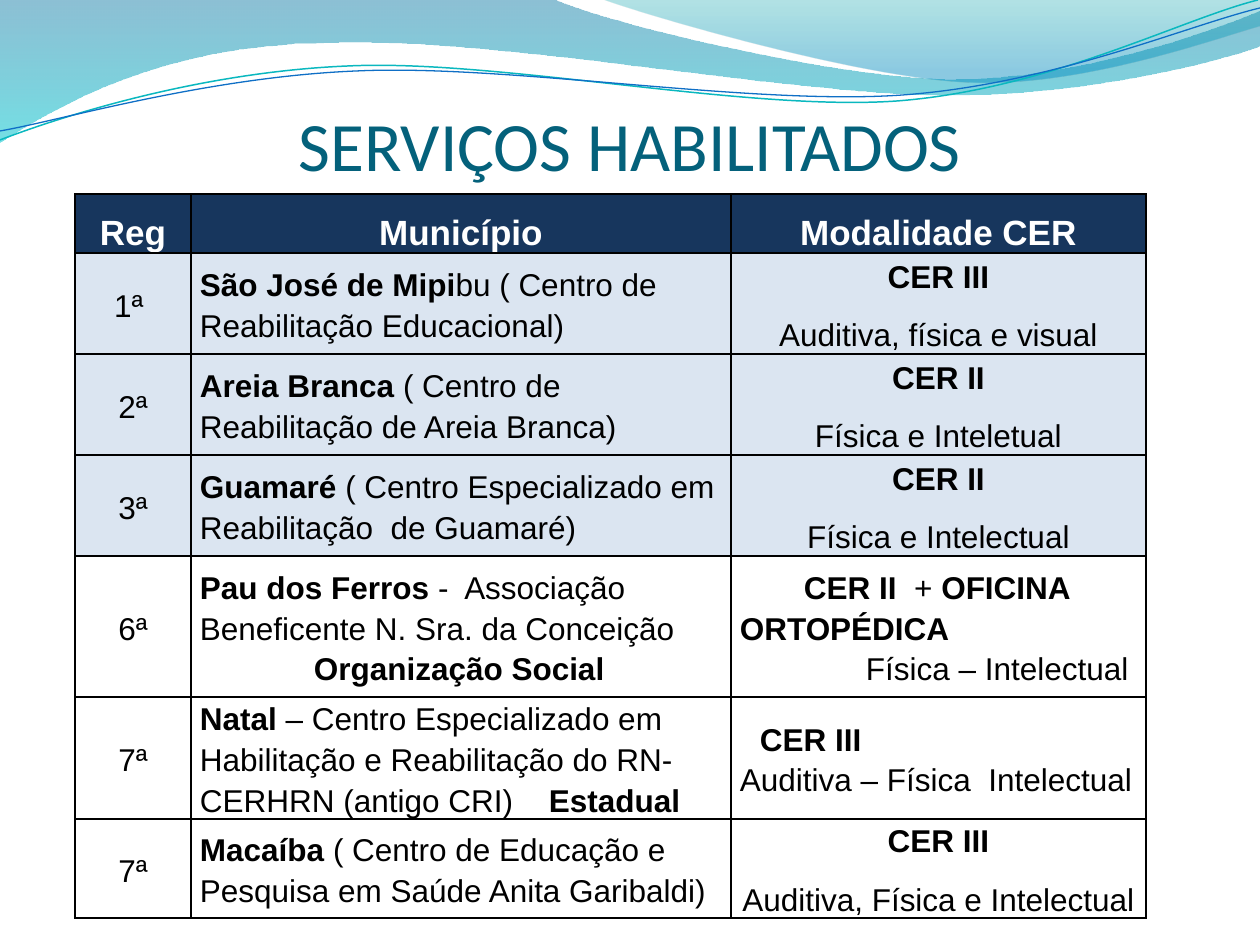
from pptx import Presentation
from pptx.dml.color import RGBColor
from pptx.enum.text import MSO_ANCHOR as Anchor, MSO_AUTO_SIZE as AutoSize, PP_ALIGN as Align
from pptx.oxml import parse_xml
from pptx.oxml.ns import nsdecls, qn
from pptx.util import Pt
from lxml.etree import SubElement

SCALE = 914400 / 126
L, C = Align.LEFT, Align.CENTER


def px(n):
    return round(n * SCALE)


def color(code):
    return RGBColor.from_string(code)


def para(text, al=C, tab=0):
    return dict(text=text, al=al, tab=tab)


def service(reg, place, *modality, tab=0):
    return [[para(reg)], [para(place, L, tab)], list(modality)]


class Deck:
    """Builds one slide with a shared style."""

    def __init__(self):
        self.prs = Presentation()
        self.prs.slide_width, self.prs.slide_height = px(1260), px(945)
        self.s = self.prs.slides.add_slide(self.prs.slide_layouts[5])
        self.ink, self.title_ink, self.font = "000000", "04617B", "Arial"
        self.header_fill, self.band_fill = "17365D", "DBE5F1"

    def run(self, p, text, size, code, bold=False, font=None):
        for i, line in enumerate(text.split("\n")):
            if i:
                p.add_line_break()
            if line:
                r = p.add_run()
                r.text = line
                f = r.font
                f.size, f.bold, f.name = Pt(size), bold, font or self.font
                f.color.rgb = color(code)

    def title(self, text, x, y, w, h):
        sp = self.s.shapes.title
        sp.left, sp.top, sp.width, sp.height = map(px, (x, y, w, h))
        tf = sp.text_frame
        tf.auto_size, tf.vertical_anchor = AutoSize.NONE, Anchor.BOTTOM
        tf.margin_left = tf.margin_right = tf.margin_bottom = 0
        tf.margin_top = px(6)
        p = tf.paragraphs[0]
        p.alignment = C
        self.run(p, text, 39.6, self.title_ink, font="Calibri")

    def curve(self, start, *segments, closed=False):
        """Draw an outline; a segment is one point, or three for a curve."""
        fb = self.s.shapes.build_freeform(*start, scale=SCALE)
        fb.add_line_segments([pt for seg in segments for pt in seg], close=closed)
        sp = fb.convert_to_shape()
        sp.shadow.inherit = False
        lines = iter(list(sp._element.iter(qn("a:lnTo"))))
        for seg in segments:
            first, *rest = [next(lines) for _ in seg]
            if rest:
                first.tag = qn("a:cubicBezTo")
                for line in rest:
                    first.append(line[0])
                    line.getparent().remove(line)
        return sp

    def wave(self, stops, start, *segments):
        sp = self.curve(start, *segments, closed=True)
        sp.line.fill.background()
        sp.fill.gradient()
        sp.fill.gradient_angle = 270
        for stop, (pos, code, _) in zip(sp.fill.gradient_stops, stops):
            stop.position, stop.color.rgb = pos, color(code)
        for clr, (_, _, alpha) in zip(sp._element.spPr.iter(qn("a:srgbClr")), stops):
            SubElement(clr, qn("a:alpha"), val=str(alpha * 1000))

    def strand(self, code, width, start, *segments):
        sp = self.curve(start, *segments)
        sp.fill.background()
        sp.line.color.rgb, sp.line.width = color(code), Pt(width)

    def cell(self, cell, paras, fill, size, code, spacing, bold=False):
        cell.vertical_anchor = Anchor.MIDDLE
        cell.margin_left = cell.margin_right = px(9)
        cell.margin_top = cell.margin_bottom = 0
        if fill:
            cell.fill.solid()
            cell.fill.fore_color.rgb = color(fill)
        else:
            cell.fill.background()
        tcPr = cell._tc.get_or_add_tcPr()
        for i, side in enumerate("LRTB"):
            tcPr.insert(i, parse_xml(
                f'<a:ln{side} {nsdecls("a")} w="12700"><a:solidFill>'
                f'<a:srgbClr val="{self.ink}"/></a:solidFill></a:ln{side}>'))
        tf = cell.text_frame
        for i, item in enumerate(paras):
            p = tf.add_paragraph() if i else tf.paragraphs[0]
            p.alignment, p.line_spacing, p.space_after = item["al"], spacing, Pt(10)
            if item["tab"]:
                tabs = SubElement(p._p.get_or_add_pPr(), qn("a:tabLst"))
                SubElement(tabs, qn("a:tab"), pos=str(px(item["tab"])), algn="l")
            for n, part in enumerate(item["text"].split("**")):
                self.run(p, part, size, code, bold or n % 2 == 1)

    def table(self, x, y, widths, heights, header, rows, banded):
        frame = self.s.shapes.add_table(len(heights), len(widths), px(x), px(y),
                                        px(sum(widths)), px(sum(heights)))
        t = frame.table
        t.first_row = t.horz_banding = False
        for col, w in zip(t.columns, widths):
            col.width = px(w)
        for row, h in zip(t.rows, heights):
            row.height = px(h)
        for j, text in enumerate(header):
            self.cell(t.cell(0, j), [para(text)], self.header_fill, 20, "FFFFFF", 1.5, True)
        for i, row in enumerate(rows, 1):
            fill = self.band_fill if i <= banded else None
            for j, paras in enumerate(row):
                self.cell(t.cell(i, j), paras, fill, 18, self.ink, 1.15)


def main():
    d = Deck()
    d.wave([(0, "0074A1", 45), (1, "00C6CF", 55)], (0, 0), [(555, 0)],
           [(600, 21), (837, 79), (955, 79)], [(1074, 79), (1207, 33), (1260, 11)],
           [(1260, 46)], [(1239, 55), (1096, 96), (940, 95)],
           [(784, 94), (481, 35), (324, 43)], [(163, 45), (58, 105), (0, 142)])
    d.wave([(0, "00A1A9", 30), (0.8, "008BBF", 45)], (604, 0),
           [(641, 14), (859, 78), (969, 82)], [(1079, 87), (1211, 40), (1260, 26)], [(1260, 0)])
    d.strand("0AB8BF", 0.85, (0, 140), [(60, 117), (199, 72), (349, 66)],
             [(498, 59), (747, 112), (898, 101)], [(1050, 89), (1182, 19), (1258, 0)])
    d.strand("0F6FC6", 0.75, (0, 131), [(59, 121), (207, 77), (357, 71)],
             [(508, 64), (752, 106), (903, 95)], [(1053, 84), (1186, 26), (1260, 8)])
    d.title("SERVIÇOS HABILITADOS", 63, 97, 1134, 88)
    rows = [
        service("1ª ", "**São José de Mipi**bu ( Centro de Reabilitação Educacional)",
                para("**CER III**"), para("Auditiva, física e visual")),
        service("2ª", "**Areia Branca **( Centro de Reabilitação de Areia Branca)",
                para("**CER II**"), para("Física e Inteletual")),
        service("3ª", "**Guamaré **( Centro Especializado em Reabilitação  de Guamaré)",
                para("**CER II**"), para("Física e Intelectual")),
        service("6ª", "**Pau dos Ferros **-  Associação Beneficente N. Sra. da Conceição"
                      "\n\t**Organização Social**",
                para("\t**CER II  **+ **OFICINA\nORTOPÉDICA**\n\t\tFísica – Intelectual", L, 64),
                tab=114),
        service("7ª", "**Natal** – Centro Especializado em Habilitação e Reabilitação do "
                      "RN-CERHRN (antigo CRI)\t**Estadual**",
                para("\t**CER III**\nAuditiva – Física  Intelectual", L, 20), tab=349),
        service("7ª", "**Macaíba** ( Centro de Educação e Pesquisa em Saúde Anita Garibaldi)",
                para("**CER III**"), para("Auditiva, Física e Intelectual")),
    ]
    d.table(75, 194, [116, 540, 415], [59, 101, 101, 101, 141, 122, 99],
            ["Reg", "Município", "Modalidade CER"], rows, banded=3)
    d.prs.save("out.pptx")


if __name__ == "__main__":
    main()
